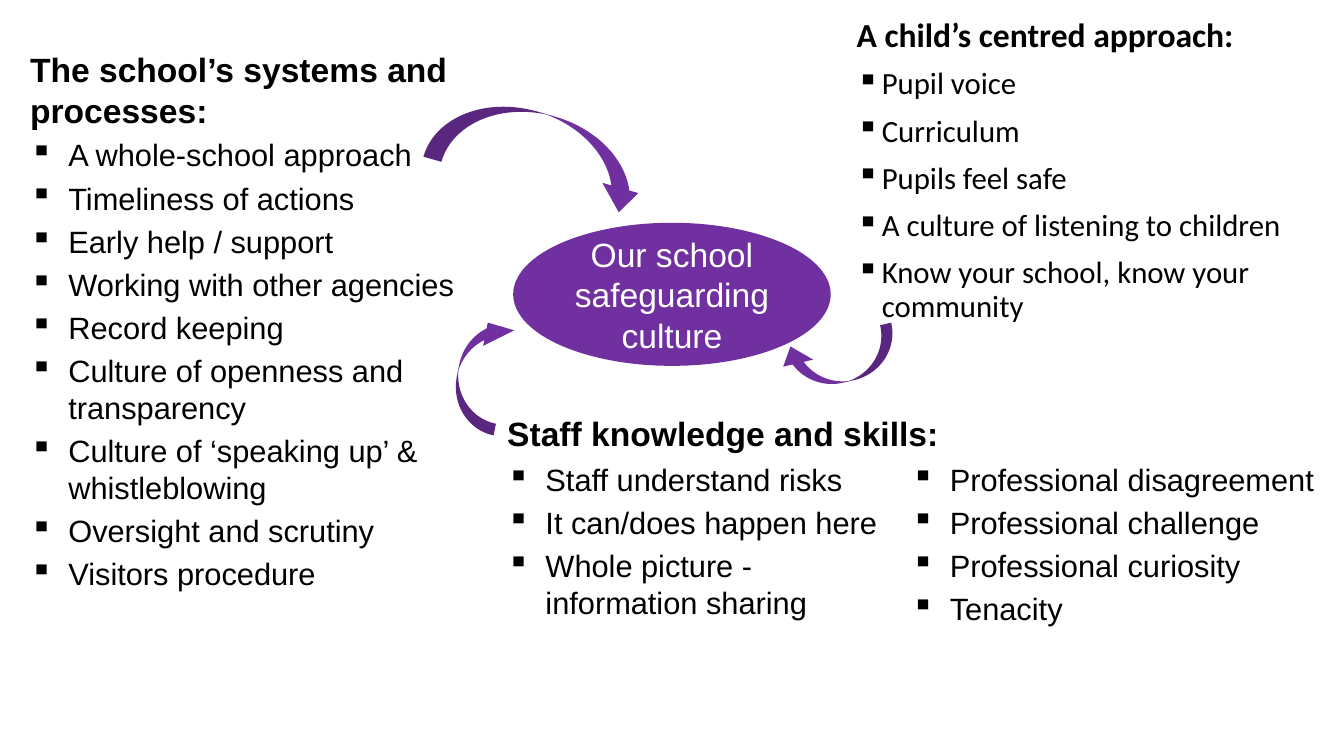
import dataclasses

import pptx
import pptx.dml.color
import pptx.enum.shapes
import pptx.enum.text
import pptx.oxml.ns
import pptx.util
from lxml import etree


@dataclasses.dataclass(frozen=True)
class Theme:
    """Colours, fonts and type sizes of the slide."""
    ink: str = "000000"
    paper: str = "FFFFFF"
    accent: str = "7030A0"
    sans: str = "Arial"
    soft: str = "Calibri"
    head: int = 24
    body: int = 22


THEME = Theme()
WIDTH, HEIGHT = pptx.util.Inches(13.33), pptx.util.Inches(7.5)

SYSTEMS = [
    "A whole-school approach",
    "Timeliness of actions",
    "Early help / support",
    "Working with other agencies",
    "Record keeping",
    "Culture of openness and transparency",
    "Culture of ‘speaking up’ & whistleblowing",
    "Oversight and scrutiny",
    "Visitors procedure",
]
CHILD = [
    "Pupil voice",
    "Curriculum",
    "Pupils feel safe",
    "A culture of listening to children",
    "Know your school, know your community",
]
STAFF = [
    "Staff understand risks",
    "It can/does happen here",
    "Whole picture - information sharing",
    "Professional disagreement",
    "Professional challenge",
    "Professional curiosity",
    "Tenacity",
]
ARROWS = [
    ((31.95, 15.07, 16.5, 9.87), 15.9, (0.25, 0.5, 0.32)),
    ((57.98, 44.4, 8.85, 6.27), 166.7, (0.24, 0.65, 0.38)),
    ((31.43, 46.13, 8.85, 6.27), 281.1, (0.25, 0.5, 0.58)),
]


def place(box):
    """Turn left, top, width and height in percent of the slide into lengths."""
    sides = (WIDTH, HEIGHT, WIDTH, HEIGHT)
    return [round(share * side / 100) for share, side in zip(box, sides)]


def style(para, size, face, color, bold=False):
    """Set the font of a paragraph."""
    font = para.font
    font.size, font.name, font.bold = pptx.util.Pt(size), face, bold
    font.color.rgb = pptx.dml.color.RGBColor.from_string(color)


def bullet(para, indent):
    """Give a paragraph a square bullet with a hanging indent in inches."""
    props = para._p.get_or_add_pPr()
    hang = pptx.util.Inches(indent)
    props.set("marL", str(hang))
    props.set("indent", str(-hang))
    mark = etree.Element(pptx.oxml.ns.qn("a:buChar"), char="▪")
    rest = props.find(pptx.oxml.ns.qn("a:defRPr"))
    rest.addprevious(mark)


def block(slide, box, title="", items=(), face=THEME.sans, indent=0.38,
          gap=0.2 * THEME.body, line=None, cols=1):
    """Add a text box with an optional bold title and a bulleted list."""
    frame = slide.shapes.add_textbox(*place(box)).text_frame
    frame.word_wrap = True
    if cols > 1:
        frame._txBody.bodyPr.set("numCol", str(cols))
    texts = ([title] if title else []) + list(items)
    for index, text in enumerate(texts):
        para = frame.add_paragraph() if index else frame.paragraphs[0]
        para.text = text
        para.space_before = pptx.util.Pt(gap)
        para.line_spacing = line
        top = bool(title) and index == 0
        style(para, THEME.head if top else THEME.body, face, THEME.ink, top)
        if not top:
            bullet(para, indent)


def solid(slide, kind, box):
    """Add a preset shape in the accent colour without a line."""
    shape = slide.shapes.add_shape(kind, *place(box))
    shape.shadow.inherit = False
    shape.fill.solid()
    shape.fill.fore_color.rgb = pptx.dml.color.RGBColor.from_string(THEME.accent)
    shape.line.fill.background()
    return shape


def hub(slide, box, text):
    """Add the central ellipse with its label."""
    shape = solid(slide, pptx.enum.shapes.MSO_SHAPE.OVAL, box)
    frame = shape.text_frame
    frame.word_wrap = True
    frame.vertical_anchor = pptx.enum.text.MSO_ANCHOR.MIDDLE
    para = frame.paragraphs[0]
    para.text = text
    para.alignment = pptx.enum.text.PP_ALIGN.CENTER
    style(para, THEME.head, THEME.sans, THEME.paper)


def arrow(slide, box, turn, bends):
    """Add a curved arrow turned by some degrees."""
    shape = solid(slide, pptx.enum.shapes.MSO_SHAPE.CURVED_DOWN_ARROW, box)
    shape.rotation = turn
    for index, bend in enumerate(bends):
        shape.adjustments[index] = bend


def main():
    """Build the slide and save it."""
    deck = pptx.Presentation()
    deck.slide_width, deck.slide_height = WIDTH, HEIGHT
    slide = deck.slides.add_slide(deck.slide_layouts[6])
    block(slide, (1.5, 5.87, 35.4, 88.13),
          "The school’s systems and processes:", SYSTEMS)
    hub(slide, (38.18, 29.47, 23.63, 18.93), "Our school safeguarding culture")
    block(slide, (63, 1.73, 37, 40.93), "A child’s centred approach:", CHILD,
          face=THEME.soft, indent=0.25, gap=10, line=0.9)
    block(slide, (37, 60.27, 61.65, 24), items=STAFF, cols=2)
    block(slide, (37, 54, 44.93, 6.8), "Staff knowledge and skills:", gap=0)
    for box, turn, bends in ARROWS:
        arrow(slide, box, turn, bends)
    deck.save("out.pptx")


if __name__ == "__main__":
    main()
